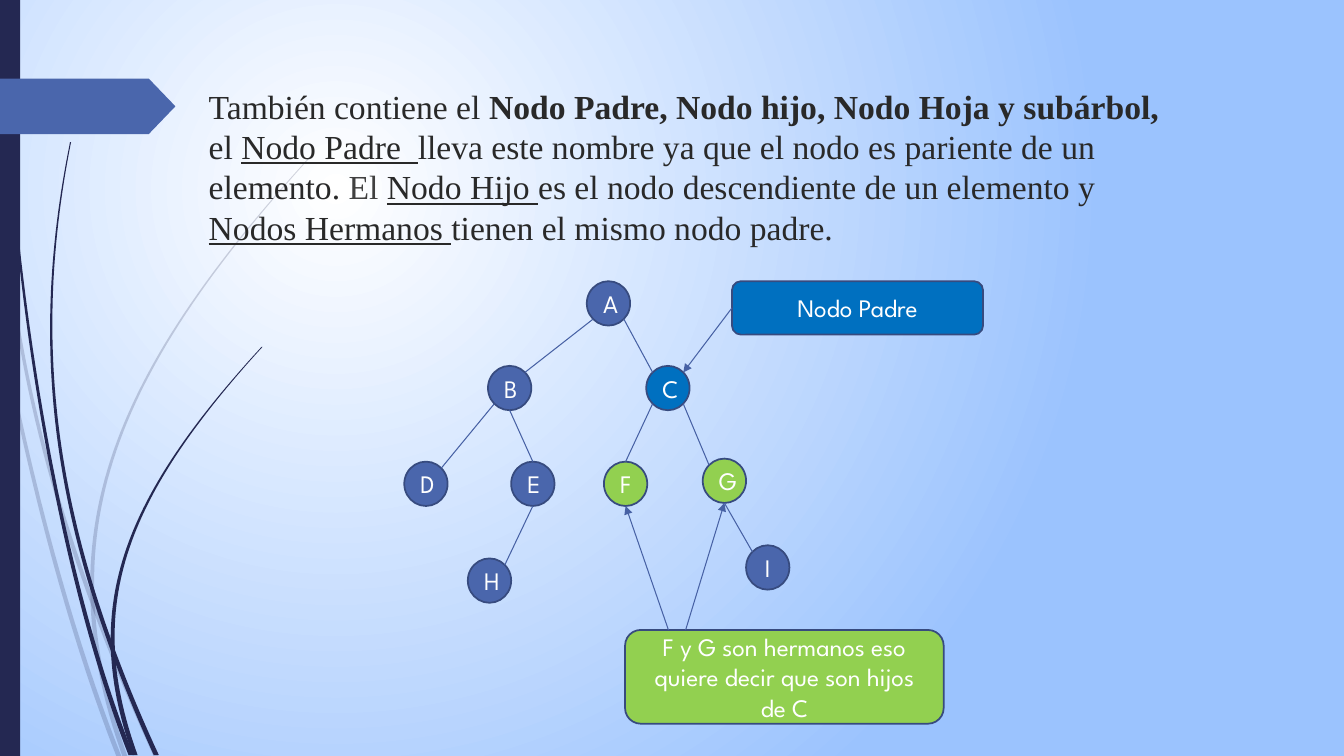
"""Builds a slide that explains parent, child and sibling nodes with a tree."""
from dataclasses import dataclass
from math import cos, radians, sin

from pptx import Presentation
from pptx.dml.color import RGBColor
from pptx.enum.shapes import MSO_CONNECTOR as Link, MSO_SHAPE as Shape
from pptx.enum.text import MSO_ANCHOR as Anchor, MSO_AUTO_SIZE as AutoSize, PP_ALIGN as Align
from pptx.oxml import parse_xml
from pptx.oxml.ns import nsdecls, qn
from pptx.util import Inches, Pt


@dataclass(frozen=True)
class Theme:
    white: RGBColor = RGBColor.from_string("FFFFFF")
    sky: RGBColor = RGBColor.from_string("9BC3FE")
    navy: RGBColor = RGBColor.from_string("242852")
    indigo: RGBColor = RGBColor.from_string("4A66AC")
    outline: RGBColor = RGBColor.from_string("374B7F")
    branch: RGBColor = RGBColor.from_string("4761A4")
    parent: RGBColor = RGBColor.from_string("0070C0")
    sibling: RGBColor = RGBColor.from_string("92D050")
    ink: RGBColor = RGBColor.from_string("292929")
    soft_ink: RGBColor = RGBColor.from_string("404040")
    body_font: str = "Times New Roman"
    label_font: str = "League Spartan"
    body_size: Pt = Pt(24)
    label_size: Pt = Pt(18)
    outline_width: Pt = Pt(1.25)
    branch_width: Pt = Pt(0.75)


theme = Theme()


def add_label(kind, left, top, width, height, color, text):
    """Add an outlined shape with a centred label."""
    box = page.shapes.add_shape(kind, Inches(left), Inches(top), Inches(width), Inches(height))
    box.shadow.inherit = False
    box.fill.solid()
    box.fill.fore_color.rgb = color
    box.line.color.rgb = theme.outline
    box.line.width = theme.outline_width
    box.text_frame.vertical_anchor = Anchor.MIDDLE
    para = box.text_frame.paragraphs[0]
    para.text = text
    para.alignment = Align.CENTER
    para.font.name = theme.label_font
    para.font.size = theme.label_size
    para.font.color.rgb = theme.white
    return box


def add_link(start, node, side, arrow=False):
    """Draw a line from a (node, side) pair or an EMU point to a side of a node."""
    ends = []
    for end in (start, (node, side)):
        if end[0] in circles:
            circle, angle = circles[end[0]], radians(side_angles[end[1]])
            end = (int(circle.left + circle.width * (1 + cos(angle)) / 2),
                   int(circle.top + circle.height * (1 + sin(angle)) / 2))
        ends += end
    link = page.shapes.add_connector(Link.STRAIGHT, *ends)
    link.line.color.rgb = theme.branch
    link.line.width = theme.branch_width
    properties = link.element.spPr
    if arrow:
        properties.find(qn("a:ln")).append(
            parse_xml(f'<a:tailEnd {nsdecls("a")} type="triangle"/>'))
    properties.append(parse_xml(f'<a:effectLst {nsdecls("a")}/>'))
    return link


deck = Presentation()
deck.slide_width, deck.slide_height = Inches(13.33), Inches(7.5)
page = deck.slides.add_slide(deck.slide_layouts[1])
title = page.shapes.title.element
title.getparent().remove(title)

backdrop = page.background.fill
backdrop.gradient()
for stop, color in zip(backdrop.gradient_stops, (theme.white, theme.sky)):
    stop.color.rgb = color
gradient = page.element.find(".//" + qn("a:gradFill"))
gradient.replace(gradient.find(qn("a:lin")), parse_xml(
    f'<a:path {nsdecls("a")} path="circle">'
    '<a:fillToRect l="50000" t="50000" r="100000" b="100000"/></a:path>'))

# Each stem is a cubic Bezier curve that widens from tip to foot.
stem_curves = {
    "left": ((0.03, 0), (0.07, 2.6), (0.55, 5.6), (1.3, 7.49)),
    "middle": ((0.7, 1.41), (0.3, 3.4), (0.5, 5.2), (1.55, 7.49)),
    "right": ((2.6, 3.44), (1.2, 4.97), (0.82, 6.04), (1.34, 7.49)),
}
tip_width, foot_width, steps = 0.01, 0.05, 60
pale_tuft = dict(scale=1.48, shift_x=-0.74, shift_y=-3.57, top=1.5, opacity=20)
dark_tuft = dict(scale=1, shift_x=0, shift_y=0, top=0, opacity=100)
for tuft in (pale_tuft, dark_tuft):
    for curve in stem_curves.values():
        left_edge, right_edge = [], []
        for t in (step / steps for step in range(steps + 1)):
            weights = ((1 - t)**3, 3 * t * (1 - t)**2, 3 * t**2 * (1 - t), t**3)
            x, y = (sum(w * n for w, n in zip(weights, axis)) for axis in zip(*curve))
            x = x * tuft["scale"] + tuft["shift_x"]
            y = y * tuft["scale"] + tuft["shift_y"]
            half = (tip_width + (foot_width - tip_width) * t) / 2
            if x >= half and y >= tuft["top"]:
                left_edge.append((Inches(x - half), Inches(y)))
                right_edge.append((Inches(x + half), Inches(y)))
        builder = page.shapes.build_freeform(*left_edge[0])
        builder.add_line_segments(left_edge[1:] + right_edge[::-1], close=True)
        stem = builder.convert_to_shape()
        stem.shadow.inherit = False
        stem.line.fill.background()
        stem.fill.solid()
        stem.fill.fore_color.rgb = theme.navy
        stem.element.spPr.find(".//" + qn("a:srgbClr")).append(
            parse_xml(f'<a:alpha {nsdecls("a")} val="{tuft["opacity"] * 1000}"/>'))

side_bar = page.shapes.add_shape(Shape.RECTANGLE, 0, 0, Inches(0.2), Inches(7.5))
page_tab = page.shapes.add_shape(Shape.PENTAGON, 0, Inches(0.78), Inches(1.74), Inches(0.55))
page_tab.adjustments[0] = 0.48
for band, color in ((side_bar, theme.navy), (page_tab, theme.indigo)):
    band.shadow.inherit = False
    band.fill.solid()
    band.fill.fore_color.rgb = color
    band.line.fill.background()

body = page.placeholders[1]
body.element.getparent().append(body.element)
body.left, body.top, body.width, body.height = (Inches(n) for n in (1.96, 0.8, 9.75, 4.13))
body.text_frame.auto_size = AutoSize.NONE
body.text_frame.vertical_anchor = Anchor.TOP
para = body.text_frame.paragraphs[0]
para.line_spacing = 1.0
para.space_before = Pt(1.1)
settings = para._p.get_or_add_pPr()
settings.set("marL", str(Inches(0.01)))
settings.set("indent", "0")
settings.append(parse_xml(f'<a:buNone {nsdecls("a")}/>'))
para.font.name = theme.body_font
para.font.size = theme.body_size
para.font.color.rgb = theme.ink
for text, style in (
    ("También contiene el ", "plain"),
    ("Nodo Padre, Nodo hijo, Nodo Hoja y subárbol, ", "bold"),
    ("el ", "plain"),
    ("Nodo Padre  ", "underline"),
    ("lleva este nombre ya que el nodo es pariente de un elemento. ", "plain"),
    ("El ", "soft"),
    ("Nodo Hijo ", "underline"),
    ("es el nodo descendiente de un elemento y ", "plain"),
    ("Nodos Hermanos ", "underline"),
    ("tienen el mismo nodo padre.", "plain"),
):
    span = para.add_run()
    span.text = text
    if style == "bold":
        span.font.bold = True
    elif style == "underline":
        span.font.underline = True
    elif style == "soft":
        span.font.color.rgb = theme.soft_ink

node_corners = {
    "A": (5.82, 2.79),
    "B": (4.84, 3.63), "C": (6.41, 3.63),
    "D": (4.01, 4.58), "E": (5.07, 4.58), "F": (5.99, 4.58), "G": (6.97, 4.55),
    "H": (4.64, 5.54), "I": (7.4, 5.41),
}
node_colors = {"C": theme.parent, "F": theme.sibling, "G": theme.sibling}
circles = {
    letter: add_label(Shape.FLOWCHART_CONNECTOR, *corner, 0.43, 0.44,
                      node_colors.get(letter, theme.indigo), letter)
    for letter, corner in node_corners.items()
}

side_angles = {"bottom right": 45, "bottom": 90, "bottom left": 135,
               "top left": 225, "top": 270, "top right": 315}
for parent, parent_side, child, child_side in (
    ("A", "bottom left", "B", "top right"), ("A", "bottom right", "C", "top left"),
    ("B", "bottom left", "D", "top right"), ("B", "bottom", "E", "top"),
    ("C", "bottom left", "F", "top"), ("C", "bottom right", "G", "top left"),
    ("E", "bottom", "H", "top right"), ("G", "bottom", "I", "top left"),
):
    add_link((parent, parent_side), child, child_side)

parent_note = add_label(Shape.ROUNDED_RECTANGLE, 7.26, 2.79, 2.49, 0.53, theme.parent, "Nodo Padre")
sibling_note = add_label(Shape.ROUNDED_RECTANGLE, 6.2, 6.25, 3.16, 0.93, theme.sibling,
                         "F y G son hermanos eso quiere decir que son hijos de C")
note_side = (parent_note.left, parent_note.top + parent_note.height // 2)
add_link(note_side, "C", "top right", arrow=True).begin_connect(parent_note, 1)
for sibling, offset in (("F", 0.43), ("G", 0.6)):
    add_link((sibling_note.left + Inches(offset), sibling_note.top), sibling, "bottom", arrow=True)

deck.save("out.pptx")
